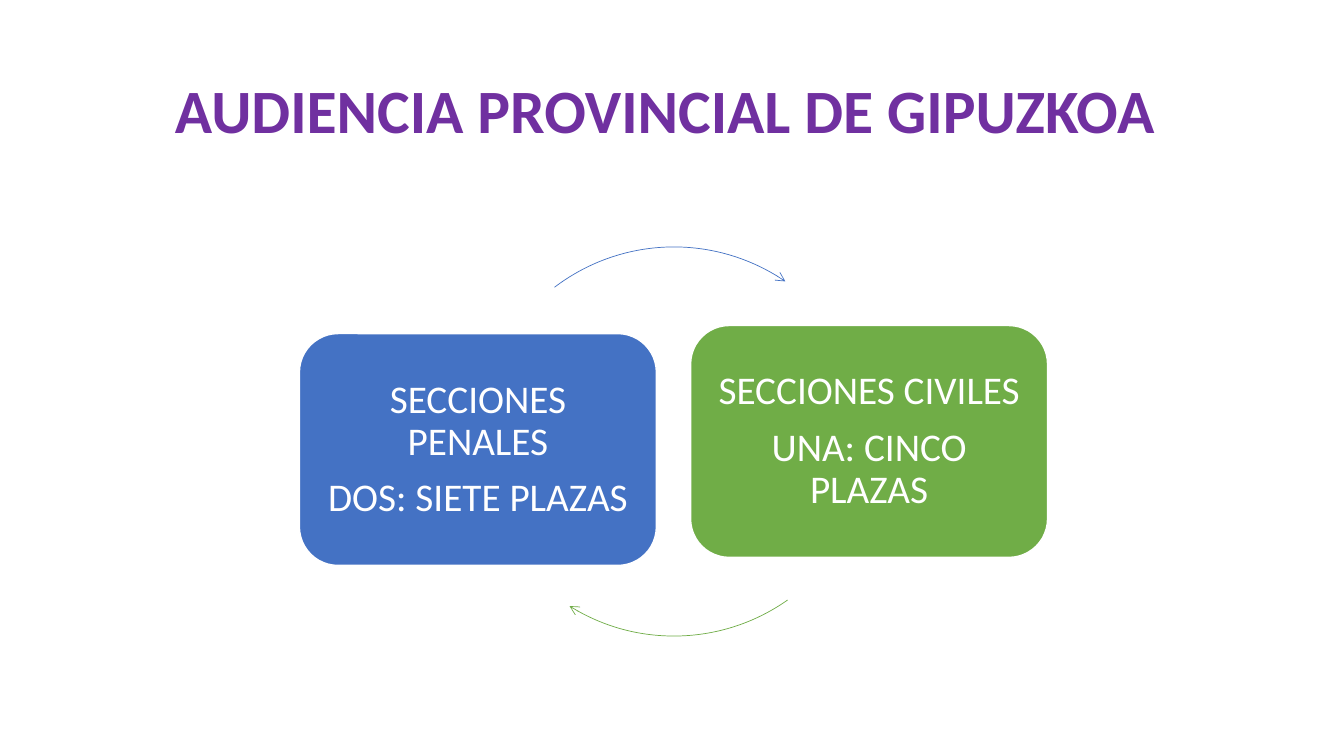
from lxml import etree
from pptx import Presentation
from pptx import util as u
from pptx.dml.color import RGBColor
from pptx.enum import shapes, text
from pptx.oxml.ns import qn


def paint(color_format, color):
    color_format.rgb = RGBColor.from_string(color)


def write(shape, lines, inset, formats):
    frame = shape.text_frame
    frame.word_wrap = True
    frame.vertical_anchor = text.MSO_ANCHOR.MIDDLE
    for side, margin in zip(("left", "top", "right", "bottom"), inset):
        setattr(frame, f"margin_{side}", u.Inches(margin))
    frame.text = "\n".join(lines)
    for paragraph in frame.paragraphs:
        paragraph.alignment = text.PP_ALIGN.CENTER
        paragraph.line_spacing = 0.9
        paragraph.space_after = u.Pt(formats["space_after"])
        font = paragraph.runs[0].font
        for name, value in formats["font"].items():
            setattr(font, name, value)
        paint(font.color, formats["color"])


presentation = Presentation()
presentation.slide_width = u.Inches(13.33)
presentation.slide_height = u.Inches(7.5)
slide = presentation.slides.add_slide(presentation.slide_layouts[6])

title_format = {
    "font": {"name": "Calibri", "size": u.Pt(44), "bold": True},
    "color": "7030A0",
    "space_after": 0,
}
section_format = {
    "font": {"name": "Calibri", "size": u.Pt(28), "bold": False},
    "color": "FFFFFF",
    "space_after": 9.8,
}

title = slide.shapes.add_textbox(u.Inches(0.92), u.Inches(0.4), u.Inches(11.5), u.Inches(1.45))
write(title, ["AUDIENCIA PROVINCIAL DE GIPUZKOA "], (0.1, 0.05, 0.1, 0.05), title_format)

sections = [
    (2.97, 3.31, "4472C4", ["SECCIONES PENALES", "DOS: SIETE PLAZAS"], 2.45, (232.7, 304.4)),
    (6.85, 3.23, "70AD47", ["SECCIONES CIVILES", "UNA: CINCO PLAZAS"], 2.4, (54.8, 122)),
]
for left, top, color, lines, arc_top, angles in sections:
    box = slide.shapes.add_shape(
        shapes.MSO_SHAPE.ROUNDED_RECTANGLE,
        u.Inches(left), u.Inches(top), u.Inches(3.54), u.Inches(2.3),
    )
    box.shadow.inherit = False
    box.fill.solid()
    paint(box.fill.fore_color, color)
    paint(box.line.color, "FFFFFF")
    box.line.width = u.Pt(1)
    write(box, lines, (0.12,) * 4, section_format)

    arrow = slide.shapes.add_shape(
        shapes.MSO_SHAPE.ARC,
        u.Inches(4.73), u.Inches(arc_top), u.Inches(3.91), u.Inches(3.91),
    )
    arrow.shadow.inherit = False
    arrow.fill.background()
    for index, angle in enumerate(angles):
        arrow.adjustments[index] = angle * 0.6
    paint(arrow.line.color, color)
    arrow.line.width = u.Pt(0.5)
    outline = arrow.line._get_or_add_ln()
    etree.SubElement(outline, qn("a:tailEnd"), type="arrow")

presentation.save("out.pptx")
